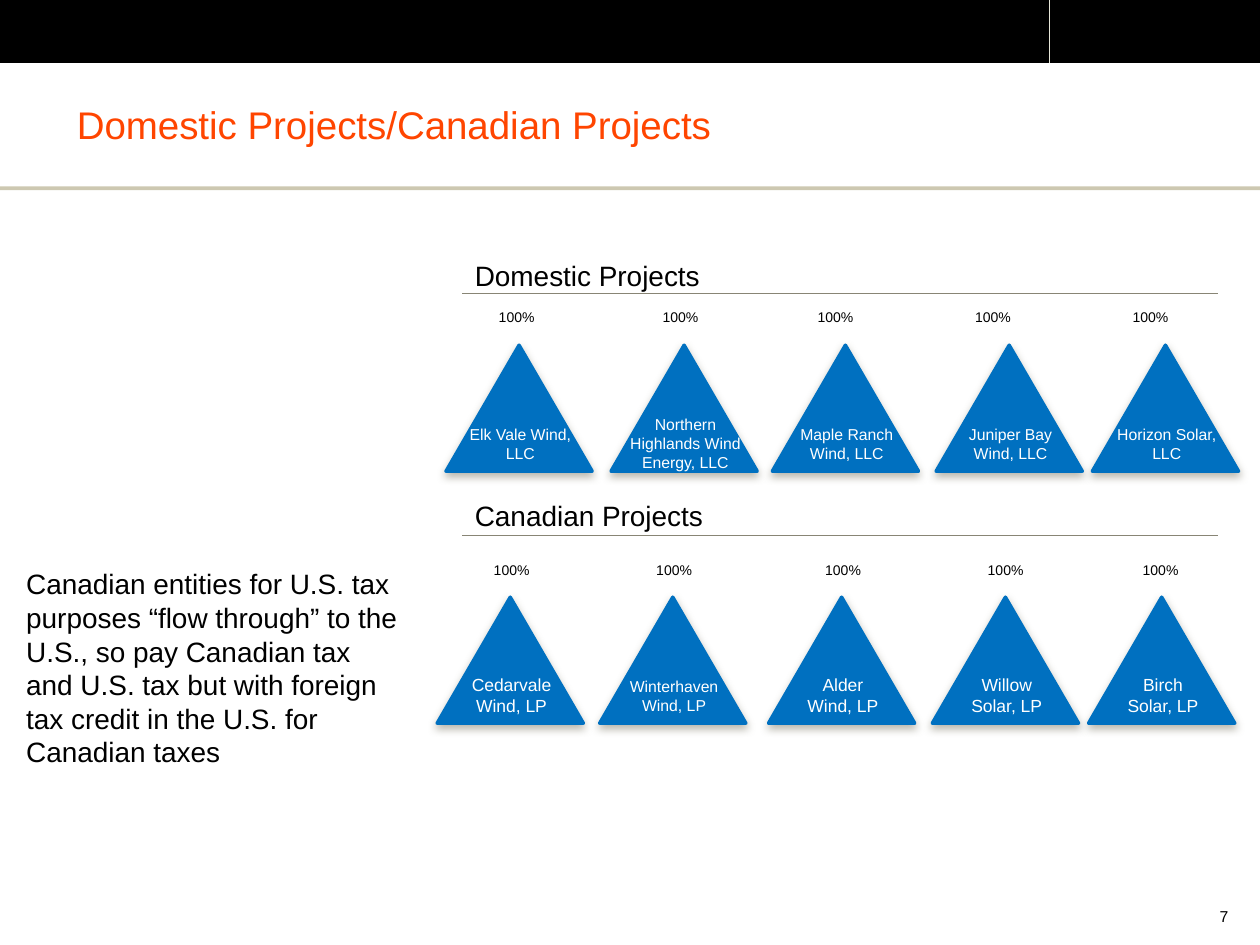
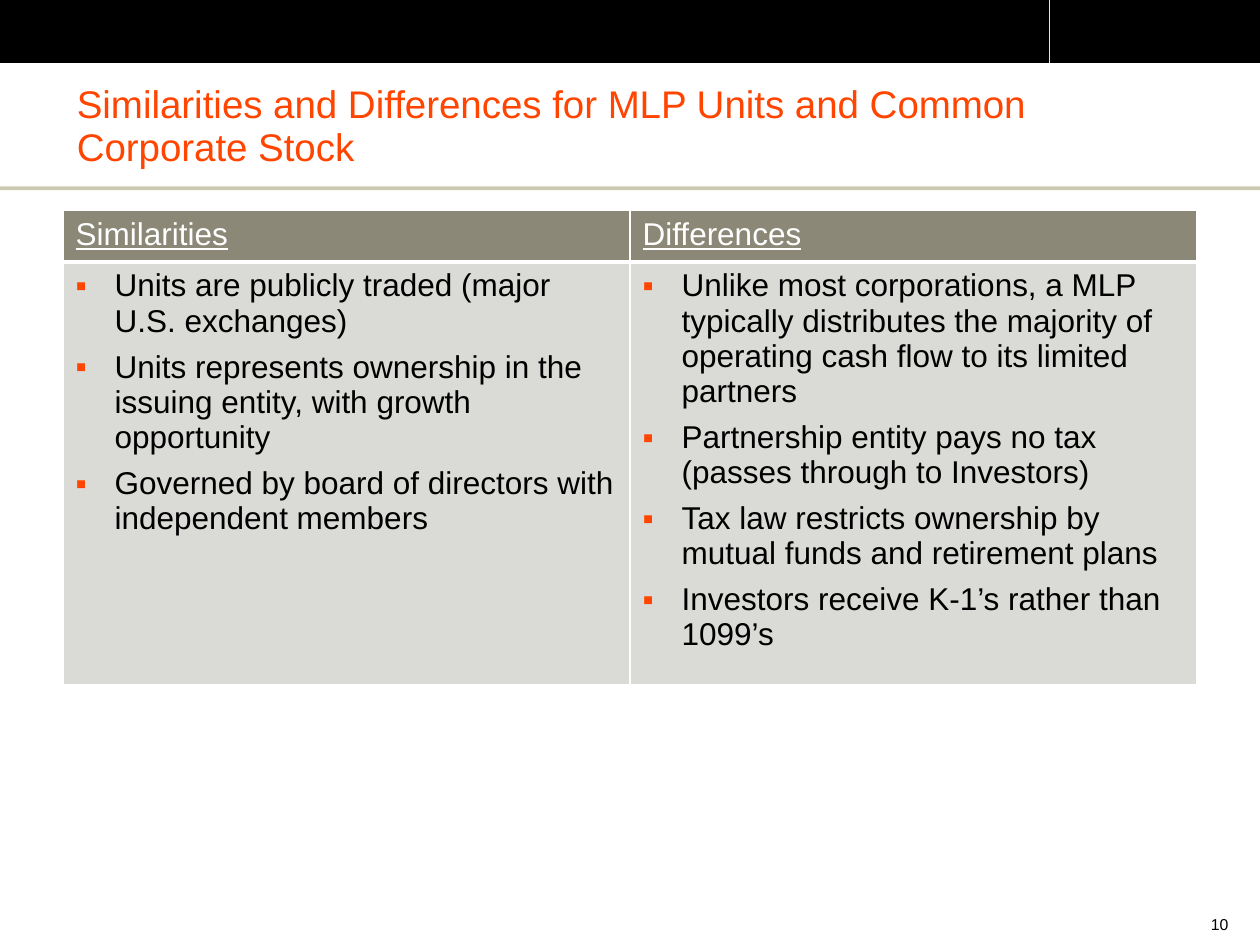
from dataclasses import dataclass

from lxml import etree
from pptx import Presentation
from pptx.dml.color import RGBColor
from pptx.enum import shapes, text
from pptx.oxml import ns
from pptx.util import Inches, Pt


@dataclass(frozen=True)
class Theme:
    font: str = "Arial"
    black: str = "000000"
    white: str = "FFFFFF"
    accent: str = "FF4500"
    tick: str = "E6E6D9"
    band: str = "CDC8B1"
    rule: str = "888575"
    header: str = "8B8878"
    body: str = "DADAD6"
    project: str = "0070C0"
    title_size: float = 22
    table_size: float = 18
    text_size: float = 16
    label_size: float = 10
    small_size: float = 9
    percent_size: float = 8


@dataclass(frozen=True)
class Project:
    lines: tuple
    left: float
    percent_left: float
    size: float


@dataclass(frozen=True)
class Section:
    heading: str
    top: float
    rule: float
    percent_top: float
    triangle_top: float
    projects: tuple


THEME = Theme()
SMALL, LARGE = THEME.small_size, THEME.label_size
SECTION_LEFT, SECTION_WIDTH = 3.67, 6
TRIANGLE_WIDTH, TRIANGLE_HEIGHT = 1.16, 1
LABEL_DROP, LABEL_HEIGHT = 0.53, 0.5

SECTIONS = (
    Section("Domestic Projects", 2, 2.33, 2.4, 2.74, (
        Project(("Elk Vale Wind, LLC",), 3.54, 3.86, SMALL),
        Project(("Northern Highlands Wind Energy, LLC",), 4.85, 5.16, SMALL),
        Project(("Maple Ranch Wind, LLC",), 6.13, 6.39, SMALL),
        Project(("Juniper Bay Wind, LLC",), 7.43, 7.64, SMALL),
        Project(("Horizon Solar, LLC",), 8.67, 8.89, SMALL),
    )),
    Section("Canadian Projects", 3.91, 4.25, 4.41, 4.74, (
        Project(("Cedarvale", "Wind, LP"), 3.47, 3.82, LARGE),
        Project(("Winterhaven Wind, LP",), 4.76, 5.11, SMALL),
        Project(("Alder", "Wind, LP"), 6.1, 6.45, LARGE),
        Project(("Willow", "Solar, LP"), 7.4, 7.74, LARGE),
        Project(("Birch", "Solar, LP"), 8.64, 8.97, LARGE),
    )),
)

TAX_NOTE = (
    "Canadian entities for U.S. tax purposes “flow through” to the U.S., "
    "so pay Canadian tax and U.S. tax but with foreign tax credit in the "
    "U.S. for Canadian taxes"
)

COMPARISON = {
    "Similarities": (
        "Units are publicly traded (major U.S. exchanges)",
        "Units represents ownership in the issuing entity, with growth opportunity",
        "Governed by board of directors with independent members",
    ),
    "Differences": (
        "Unlike most corporations, a MLP typically distributes the majority "
        "of operating cash flow to its limited partners",
        "Partnership entity pays no tax (passes through to Investors)",
        "Tax law restricts ownership by mutual funds and retirement plans",
        "Investors receive K-1’s rather than 1099’s",
    ),
}


def rgb(color):
    return RGBColor.from_string(color)


def inches(*lengths):
    return [Inches(length) for length in lengths]


def add_xml(parent, tag, **attributes):
    return etree.SubElement(parent, ns.qn(tag), attributes)


def add_color(parent, color):
    return add_xml(parent, "a:srgbClr", val=color)


def style(para, size, color=THEME.black, align=None):
    para.alignment = align
    para.font.name = THEME.font
    para.font.size = Pt(size)
    para.font.color.rgb = rgb(color)


def set_margins(frame, left, top, right, bottom):
    frame.margin_left, frame.margin_top, frame.margin_right, frame.margin_bottom = inches(
        left, top, right, bottom)


def add_text(parent, box, lines, size, color=THEME.black, align=None, wrap=True):
    frame = parent.shapes.add_textbox(*inches(*box)).text_frame
    frame.word_wrap = wrap
    frame.text = "\n".join(lines)
    for para in frame.paragraphs:
        style(para, size, color, align)
    return frame


def add_filled(parent, kind, box, color):
    shape = parent.shapes.add_shape(kind, *inches(*box))
    shape.fill.solid()
    shape.fill.fore_color.rgb = rgb(color)
    shape.line.fill.background()
    shape.shadow.inherit = False
    return shape


def add_line(page, start, end, color, width):
    line = page.shapes.add_connector(shapes.MSO_CONNECTOR.STRAIGHT, *inches(*start, *end))
    line.line.color.rgb = rgb(color)
    line.line.width = Pt(width)
    add_xml(line.element.spPr, "a:effectLst")
    return line


def prepare_layout(deck, layout):
    page = deck.slides.add_slide(layout)
    rectangle = shapes.MSO_SHAPE.RECTANGLE
    parts = (
        add_filled(page, rectangle, (0, 0, 10, 0.5), THEME.black),
        add_line(page, (8.33, 0), (8.33, 0.5), THEME.tick, 1),
        add_filled(page, rectangle, (0, 1.48, 10, 0.03), THEME.band),
    )
    for position, part in enumerate(parts, 2):
        layout.shapes.element.insert(position, part.element)
    title = next(shape for shape in layout.placeholders
                 if shape.placeholder_format.type == shapes.PP_PLACEHOLDER.TITLE)
    title.left, title.top, title.width, title.height = inches(0.51, 0.52, 8.99, 0.98)
    return page


def add_frame(page, title, number, number_top):
    frame = page.shapes.title.text_frame
    frame.text = title
    frame.word_wrap = True
    frame.auto_size = text.MSO_AUTO_SIZE.NONE
    frame.vertical_anchor = text.MSO_ANCHOR.MIDDLE
    set_margins(frame, 0.1, 0.05, 0.1, 0.06)
    para = frame.paragraphs[0]
    style(para, THEME.title_size, THEME.accent, text.PP_ALIGN.LEFT)
    para.line_spacing = 0.93

    footer = add_text(page, (9.35, number_top, 0.4, 0.29), [number], THEME.small_size,
                      align=text.PP_ALIGN.RIGHT)
    footer.vertical_anchor = text.MSO_ANCHOR.MIDDLE
    set_margins(footer, 0.02, 0, 0, 0)


def add_glow(shape):
    effects = shape.element.spPr.find(ns.qn("a:effectLst"))
    glow = add_xml(effects, "a:outerShdw", blurRad=str(Pt(5)), dist=str(Pt(2)),
                   dir="5400000", rotWithShape="0")
    add_xml(add_color(glow, THEME.header), "a:alpha", val="60000")


def add_project(page, project, top):
    group = page.shapes.add_group_shape()
    triangle = add_filled(group, shapes.MSO_SHAPE.ISOSCELES_TRIANGLE,
                          (project.left, top, TRIANGLE_WIDTH, TRIANGLE_HEIGHT), THEME.project)
    triangle.line.color.rgb = rgb(THEME.project)
    triangle.line.width = Pt(2)
    add_glow(triangle)
    label = add_text(group, (project.left + 0.01, top + LABEL_DROP, TRIANGLE_WIDTH, LABEL_HEIGHT),
                     project.lines, project.size, THEME.white, text.PP_ALIGN.CENTER)
    label.vertical_anchor = text.MSO_ANCHOR.MIDDLE
    set_margins(label, 0.1, 0, 0.1, 0)


def add_section(page, section):
    add_text(page, (SECTION_LEFT, section.top, 2.62, 0.37), [section.heading], THEME.text_size)
    add_line(page, (SECTION_LEFT, section.rule),
             (SECTION_LEFT + SECTION_WIDTH, section.rule), THEME.rule, 0.75)
    for project in section.projects:
        add_text(page, (project.percent_left, section.percent_top, 0.52, 0.24), ["100%"],
                 THEME.percent_size, wrap=False)
        add_project(page, project, section.triangle_top)


def build_projects(page):
    add_frame(page, "Domestic Projects/Canadian Projects", "7", 7.13)
    add_text(page, (0.11, 4.45, 3.17, 1.72), [TAX_NOTE], THEME.text_size)
    for section in SECTIONS:
        add_section(page, section)


def add_bullet(para):
    properties = para._p.get_or_add_pPr()
    properties.set("marL", str(Inches(0.31)))
    properties.set("indent", str(-Inches(0.31)))
    add_color(add_xml(properties, "a:buClr"), THEME.accent)
    add_xml(properties, "a:buFont", typeface=THEME.font)
    add_xml(properties, "a:buChar", char="▪")
    para.space_after = Pt(6)


def style_cell(cell, fill, edges):
    properties = cell._tc.get_or_add_tcPr()
    for side, width in edges.items():
        border = add_xml(properties, f"a:ln{side}", w=str(Pt(width)))
        add_color(add_xml(border, "a:solidFill"), THEME.white)
    cell.fill.solid()
    cell.fill.fore_color.rgb = rgb(fill)


def add_comparison(page, box, row_heights):
    table = page.shapes.add_table(2, len(COMPARISON), *inches(*box)).table
    table.first_row = table.horz_banding = False
    for row, height in zip(table.rows, row_heights):
        row.height = Inches(height)
    for column, (heading, points) in enumerate(COMPARISON.items()):
        header, body = table.cell(0, column), table.cell(1, column)
        style_cell(header, THEME.header, {"L": 1, "R": 1, "T": 1, "B": 3})
        style_cell(body, THEME.body, {"L": 1, "R": 1, "T": 3, "B": 1})
        header.text = heading
        para = header.text_frame.paragraphs[0]
        style(para, THEME.table_size, THEME.white)
        para.font.underline = True
        body.text = "\n".join(points)
        for para in body.text_frame.paragraphs:
            add_bullet(para)
            style(para, THEME.table_size)


def build_comparison(page):
    add_frame(page, "Similarities and Differences for MLP Units and Common Corporate Stock",
              "10", 7.19)
    add_comparison(page, (0.5, 1.67, 9, 3.54), (0.41, 3.13))


def main():
    deck = Presentation()
    deck.slide_width, deck.slide_height = inches(10, 7.5)
    layout = deck.slide_layouts.get_by_name("Title Only")
    build_projects(prepare_layout(deck, layout))
    build_comparison(deck.slides.add_slide(layout))
    deck.save("out.pptx")


if __name__ == "__main__":
    main()
